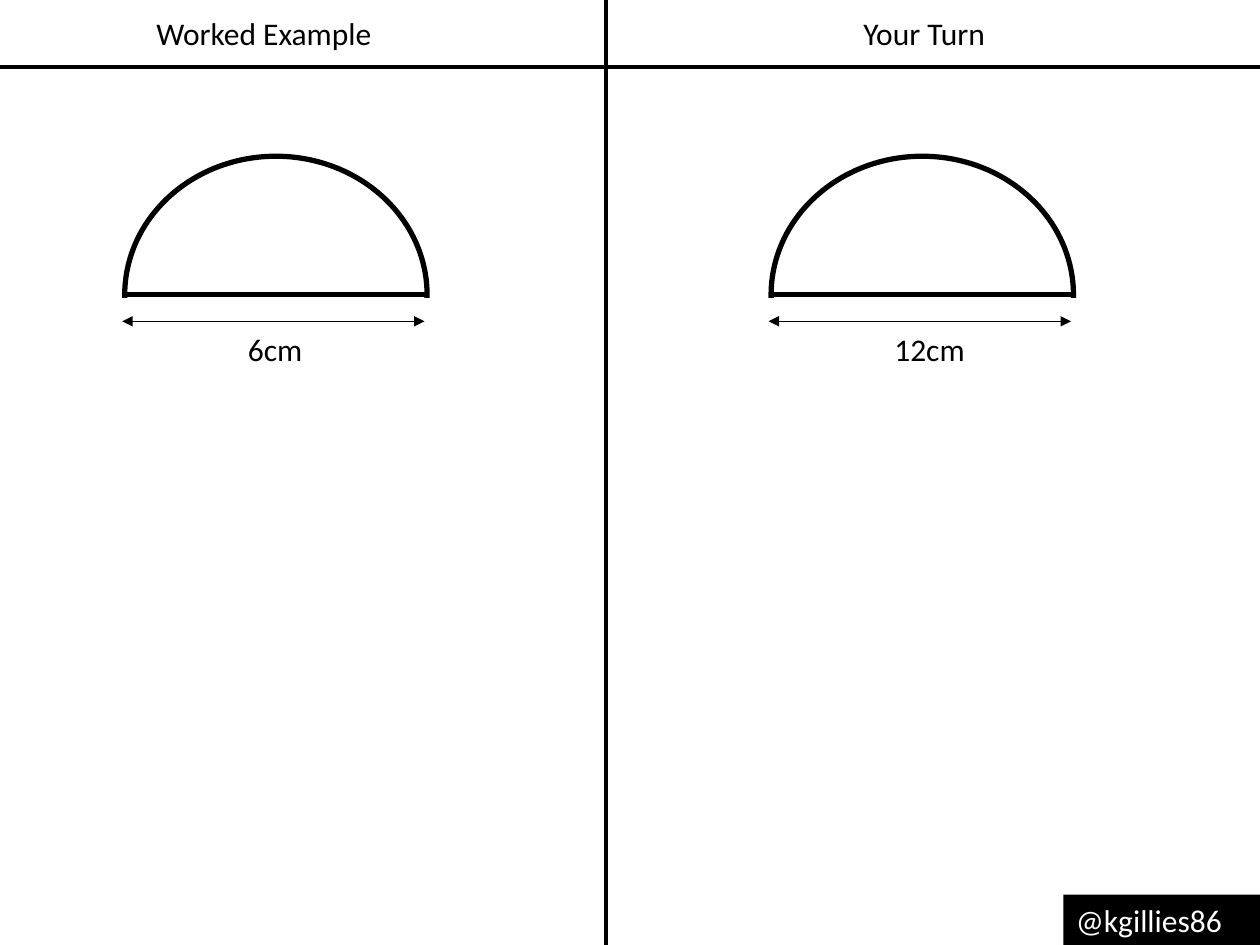
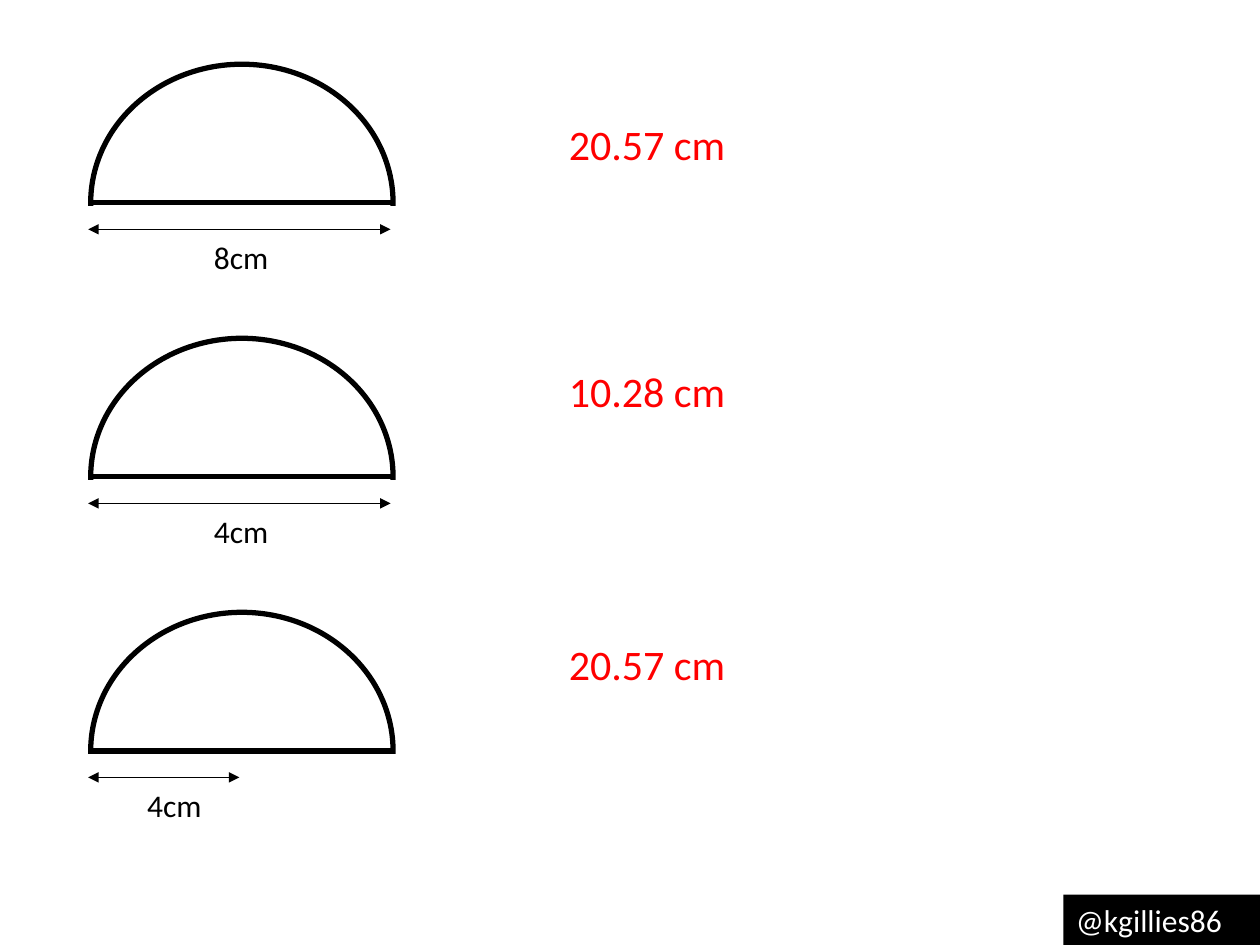
"""Semicircle perimeter lesson: a worked example page and a practice page."""
from lxml import etree
from pptx import Presentation
from pptx.dml.color import RGBColor
from pptx.enum import shapes, text
from pptx.oxml import ns
from pptx.util import Inches, Pt

BLACK = RGBColor(0x00, 0x00, 0x00)
WHITE = RGBColor(0xFF, 0xFF, 0xFF)
RED = RGBColor(0xFF, 0x00, 0x00)
FONT = "Calibri"
DIAMETER, HEIGHT = 2.4, 2.2
ROW_PITCH = 2.175


class Worksheet:
    def __init__(self):
        self.deck = Presentation()
        self.deck.slide_width = Inches(10)
        self.deck.slide_height = Inches(7.5)
        self.page = None

    def add_page(self):
        self.page = self.deck.slides.add_slide(self.deck.slide_layouts[6])

    def label(self, wording, left, top, width, height=0.4, size=18,
              color=BLACK, align=text.PP_ALIGN.LEFT):
        box = self.page.shapes.add_textbox(
            Inches(left), Inches(top), Inches(width), Inches(height))
        frame = box.text_frame
        frame.word_wrap = True
        frame.auto_size = text.MSO_AUTO_SIZE.SHAPE_TO_FIT_TEXT
        para = frame.paragraphs[0]
        para.text = wording
        para.alignment = align
        para.font.name = FONT
        para.font.size = Pt(size)
        para.font.color.rgb = color
        return box

    def line(self, left, top, right, bottom, weight, arrows=False):
        connector = self.page.shapes.add_connector(
            shapes.MSO_CONNECTOR.STRAIGHT,
            Inches(left), Inches(top), Inches(right), Inches(bottom))
        connector.line.color.rgb = BLACK
        connector.line.width = Pt(weight)
        if arrows:
            outline = connector.line._get_or_add_ln()
            for end in ("a:headEnd", "a:tailEnd"):
                etree.SubElement(outline, ns.qn(end), type="triangle")
        etree.SubElement(connector._element.spPr, ns.qn("a:effectLst"))

    def shape(self, kind, left, top, width, height, line, weight, fill=None):
        shape = self.page.shapes.add_shape(
            kind, Inches(left), Inches(top), Inches(width), Inches(height))
        shape.shadow.inherit = False
        shape.line.color.rgb = line
        shape.line.width = Pt(weight)
        if fill is None:
            shape.fill.background()
        else:
            shape.fill.solid()
            shape.fill.fore_color.rgb = fill

    def semicircle(self, left, top, wording, span=DIAMETER, label_offset=0.88):
        base = top + HEIGHT / 2
        self.shape(shapes.MSO_SHAPE.OVAL, left, top, DIAMETER, HEIGHT, BLACK, 3)
        self.line(left, base, left + DIAMETER, base, 3)
        self.shape(shapes.MSO_SHAPE.RECTANGLE, left - 0.4, base + 0.03,
                   3.16, 1.21, WHITE, 1, WHITE)
        self.label(wording, left + label_offset, base + 0.23, 0.83)
        self.line(left - 0.02, base + 0.21, left - 0.02 + span, base + 0.21,
                  0.5, arrows=True)

    def heading(self, wording, left):
        self.label(wording, left, 0.06, 1.93, align=text.PP_ALIGN.CENTER)

    def answer(self, wording, top):
        self.label(wording, 4.24, top, 1.79, 0.5, 24, RED,
                   text.PP_ALIGN.CENTER)

    def footer(self):
        box = self.label("@kgillies86", 8.44, 7.1, 1.56, color=WHITE)
        box.fill.solid()
        box.fill.fore_color.rgb = BLACK


def main():
    sheet = Worksheet()

    sheet.add_page()
    sheet.heading("Worked Example", 1.13)
    sheet.heading("Your Turn", 6.37)
    sheet.line(4.81, 0, 4.81, 7.5, 2.5)
    sheet.line(0, 0.53, 10, 0.53, 2.5)
    sheet.footer()
    for left, wording in ((0.99, "6cm"), (6.12, "12cm")):
        sheet.semicircle(left, 1.24, wording)

    sheet.add_page()
    sheet.footer()
    questions = (
        ("8cm", DIAMETER, 0.88, "20.57 cm", 0.89),
        ("4cm", DIAMETER, 0.88, "10.28 cm", 2.85),
        ("4cm", DIAMETER / 2, 0.35, "20.57 cm", 5.02),
    )
    for row, (wording, span, offset, result, answer_top) in enumerate(questions):
        sheet.semicircle(0.72, 0.51 + row * ROW_PITCH, wording, span, offset)
        sheet.answer(result, answer_top)

    sheet.deck.save("out.pptx")


if __name__ == "__main__":
    main()
